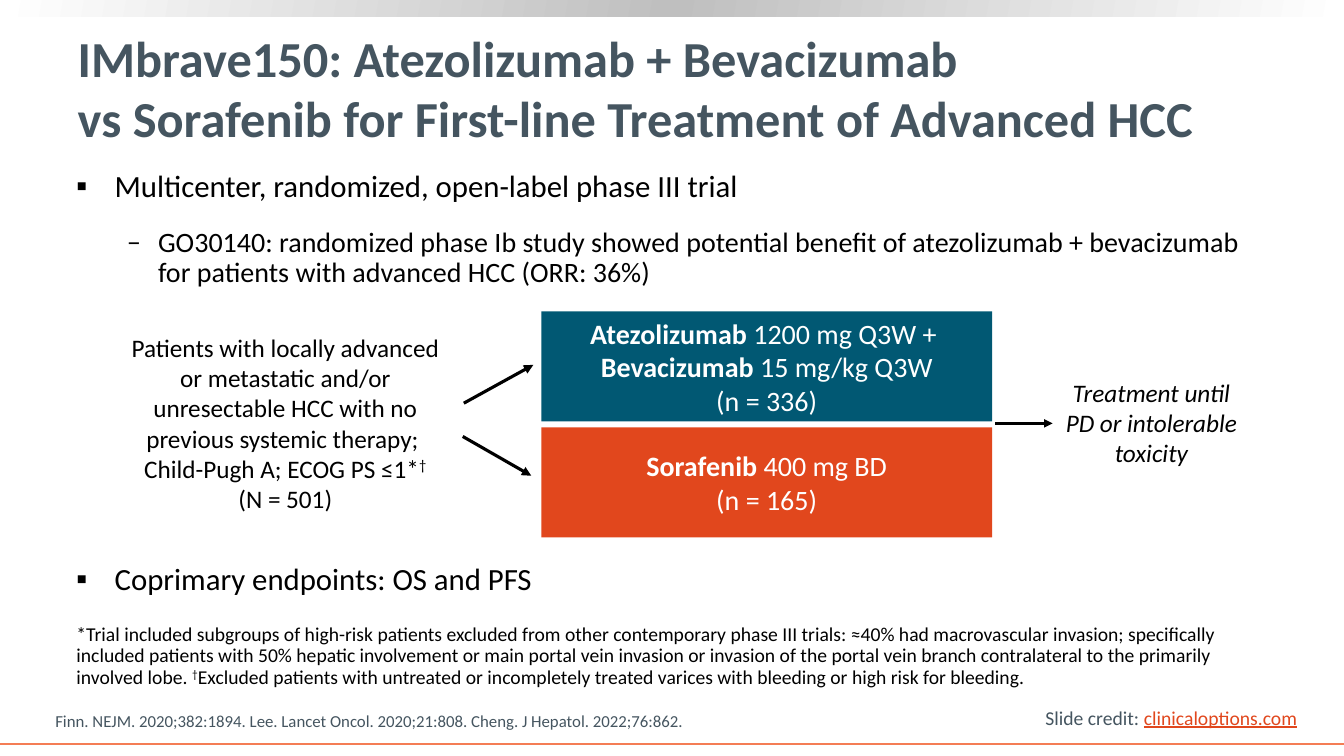
from copy import deepcopy

from lxml.etree import SubElement
from pptx import Presentation
from pptx.dml.color import RGBColor
from pptx.enum.shapes import MSO_CONNECTOR, MSO_SHAPE
from pptx.enum.text import MSO_ANCHOR, MSO_AUTO_SIZE, PP_ALIGN
from pptx.oxml.ns import qn
from pptx.util import Inches, Pt

BLACK, WHITE, SLATE = "000000", "FFFFFF", "455560"
TEAL, ORANGE, CORAL = "015873", "E1471D", "F47D55"


def color(value):
    return RGBColor.from_string(value)


def inches(values):
    return [Inches(value) for value in values]


def add_run(paragraph, text, size, ink=BLACK, bold=False, italic=False, underline=False, raised=False):
    run = paragraph.add_run()
    run.text = text
    font = run.font
    font.name, font.size = "Calibri", Pt(size)
    font.color.rgb = color(ink)
    font.bold, font.italic, font.underline = bold, italic, underline
    if raised:
        run._r.get_or_add_rPr().set("baseline", "30000")


def set_frame(frame, anchor=MSO_ANCHOR.TOP, wrap=True, side=0.1, edge=0.05):
    frame.word_wrap = wrap
    frame.auto_size = MSO_AUTO_SIZE.NONE
    frame.vertical_anchor = anchor
    frame.margin_left = frame.margin_right = Inches(side)
    frame.margin_top = frame.margin_bottom = Inches(edge)
    return frame


def add_text(slide, box, **layout):
    return set_frame(slide.shapes.add_textbox(*inches(box)).text_frame, **layout)


def next_paragraph(frame, align=PP_ALIGN.LEFT):
    first = frame.paragraphs[0]
    paragraph = frame.add_paragraph() if first.runs else first
    paragraph.alignment = align
    return paragraph


def set_spacing(paragraph, before=0):
    paragraph.line_spacing = 0.9
    paragraph.space_before = Pt(before)
    paragraph.space_after = Pt(7)


def add_bullet(frame, text, size, symbol, left, hanging, before=0):
    paragraph = next_paragraph(frame)
    properties = paragraph._p.get_or_add_pPr()
    properties.set("marL", str(Inches(left)))
    properties.set("indent", str(-Inches(hanging)))
    SubElement(SubElement(properties, qn("a:buClr")), qn("a:srgbClr")).set("val", BLACK)
    SubElement(properties, qn("a:buFont")).set("typeface", "Calibri")
    SubElement(properties, qn("a:buChar")).set("char", symbol)
    set_spacing(paragraph, before)
    add_run(paragraph, text, size)


def add_block(slide, box, fill=None):
    block = slide.shapes.add_shape(MSO_SHAPE.RECTANGLE, *inches(box))
    block.shadow.inherit = False
    block.line.fill.background()
    if fill:
        block.fill.solid()
        block.fill.fore_color.rgb = color(fill)
    return block


def add_line(slide, start, end, ink, width, arrow=False):
    line = slide.shapes.add_connector(MSO_CONNECTOR.STRAIGHT, *inches(start + end))
    line.line.color.rgb = color(ink)
    line.line.width = Pt(width)
    if arrow:
        SubElement(line.line._get_or_add_ln(), qn("a:tailEnd")).set("type", "triangle")
    SubElement(line._element.spPr, qn("a:effectLst"))


def add_top_band(slide):
    band = add_block(slide, (0, 0, 13.33, 0.16))
    band.fill.gradient()
    band.fill.gradient_angle = 170
    stops = band._element.spPr.find(qn("a:gradFill")).find(qn("a:gsLst"))
    stops.insert(1, deepcopy(stops[0]))
    for stop, position, ink in zip(band.fill.gradient_stops, (0, 0.5, 1), (WHITE, "BFBFBF", WHITE)):
        stop.position = position
        stop.color.rgb = color(ink)


def add_title(slide):
    title = slide.shapes.title
    title.left, title.top, title.width, title.height = inches((0.67, 0.26, 11.89, 1.21))
    heading = next_paragraph(set_frame(title.text_frame, anchor=MSO_ANCHOR.MIDDLE))
    add_run(heading, "IMbrave150: Atezolizumab + Bevacizumab ", 36, SLATE, bold=True)
    heading.add_line_break()
    add_run(heading, "vs Sorafenib for First-line Treatment of Advanced HCC", 36, SLATE, bold=True)


def add_arm(slide, top, fill, drugs, count):
    block = add_block(slide, (5.37, top, 4.47, 1.09), fill)
    frame = set_frame(block.text_frame, anchor=MSO_ANCHOR.MIDDLE, wrap=False)
    regimen = next_paragraph(frame, PP_ALIGN.CENTER)
    for index, (drug, dose) in enumerate(drugs):
        if index:
            regimen.add_line_break()
        add_run(regimen, drug, 20, WHITE, bold=True)
        add_run(regimen, dose, 20, WHITE)
    add_run(next_paragraph(frame, PP_ALIGN.CENTER), count, 20, WHITE)


def add_population(slide):
    frame = add_text(slide, (1.19, 3.14, 3.28, 2.11), anchor=MSO_ANCHOR.MIDDLE, edge=0.04)
    add_run(next_paragraph(frame, PP_ALIGN.CENTER),
            "Patients with locally advanced or metastatic and/or unresectable HCC "
            "with no previous systemic therapy; ", 18)
    criteria = next_paragraph(frame, PP_ALIGN.CENTER)
    add_run(criteria, "Child-Pugh A; ECOG PS ≤1*", 18)
    add_run(criteria, "†", 18, raised=True)
    add_run(next_paragraph(frame, PP_ALIGN.CENTER), "(N = 501)", 18)


def add_footnote(slide):
    note = next_paragraph(add_text(slide, (0.66, 6.15, 12.11, 0.84)))
    set_spacing(note)
    add_run(note, "*Trial included subgroups of high-risk patients excluded from other contemporary "
            "phase III trials: ≈40% had macrovascular invasion; specifically included patients with "
            "50% hepatic involvement or main portal vein invasion or invasion of the portal vein "
            "branch contralateral to the primarily involved lobe. ", 14)
    add_run(note, "†", 14, raised=True)
    add_run(note, "Excluded patients with untreated or incompletely treated varices with bleeding "
            "or high risk for bleeding.", 14)


def main():
    deck = Presentation()
    deck.slide_width, deck.slide_height = inches((13.33, 7.5))
    slide = deck.slides.add_slide(deck.slide_layouts[5])

    add_top_band(slide)
    add_line(slide, (0, 7.38), (13.33, 7.38), CORAL, 1.5)
    credit = next_paragraph(add_text(slide, (10.27, 6.95, 2.72, 0.34), wrap=False))
    add_run(credit, "Slide credit: ", 14, SLATE)
    add_run(credit, "clinicaloptions.com", 14, ORANGE, underline=True)
    add_title(slide)

    design = add_text(slide, (0.66, 1.65, 11.9, 1.4))
    add_bullet(design, "Multicenter, randomized, open-label phase III trial", 22, "▪", 0.38, 0.38)
    add_bullet(design, "GO30140: randomized phase Ib study showed potential benefit of atezolizumab "
               "+ bevacizumab for patients with advanced HCC (ORR: 36%)", 20, "‒", 0.81, 0.31, before=10)
    endpoints = add_text(slide, (0.66, 5.55, 11.9, 0.64))
    add_bullet(endpoints, "Coprimary endpoints: OS and PFS", 22, "▪", 0.38, 0.38)

    add_population(slide)
    add_arm(slide, 3.09, TEAL, [("Atezolizumab ", "1200 mg Q3W + "),
                                ("Bevacizumab ", "15 mg/kg Q3W")], "(n = 336)")
    add_arm(slide, 4.24, ORANGE, [("Sorafenib ", "400 mg BD")], "(n = 165)")
    duration = add_block(slide, (10.44, 3.22, 1.96, 1.94), WHITE)
    frame = set_frame(duration.text_frame, anchor=MSO_ANCHOR.MIDDLE, side=0.07, edge=0.04)
    add_run(next_paragraph(frame, PP_ALIGN.CENTER),
            "Treatment until PD or intolerable toxicity", 18, italic=True)

    add_line(slide, (4.6, 4), (5.29, 3.62), BLACK, 2.25, arrow=True)
    add_line(slide, (4.59, 4.33), (5.27, 4.72), BLACK, 2.25, arrow=True)
    add_line(slide, (9.87, 4.2), (10.44, 4.2), BLACK, 2, arrow=True)

    add_footnote(slide)
    citation = add_text(slide, (0.45, 7, 8.76, 0.3), anchor=MSO_ANCHOR.BOTTOM)
    add_run(next_paragraph(citation),
            "Finn. NEJM. 2020;382:1894. Lee. Lancet Oncol. 2020;21:808. "
            "Cheng. J Hepatol. 2022;76:862.", 12, SLATE)
    deck.save("out.pptx")


if __name__ == "__main__":
    main()
